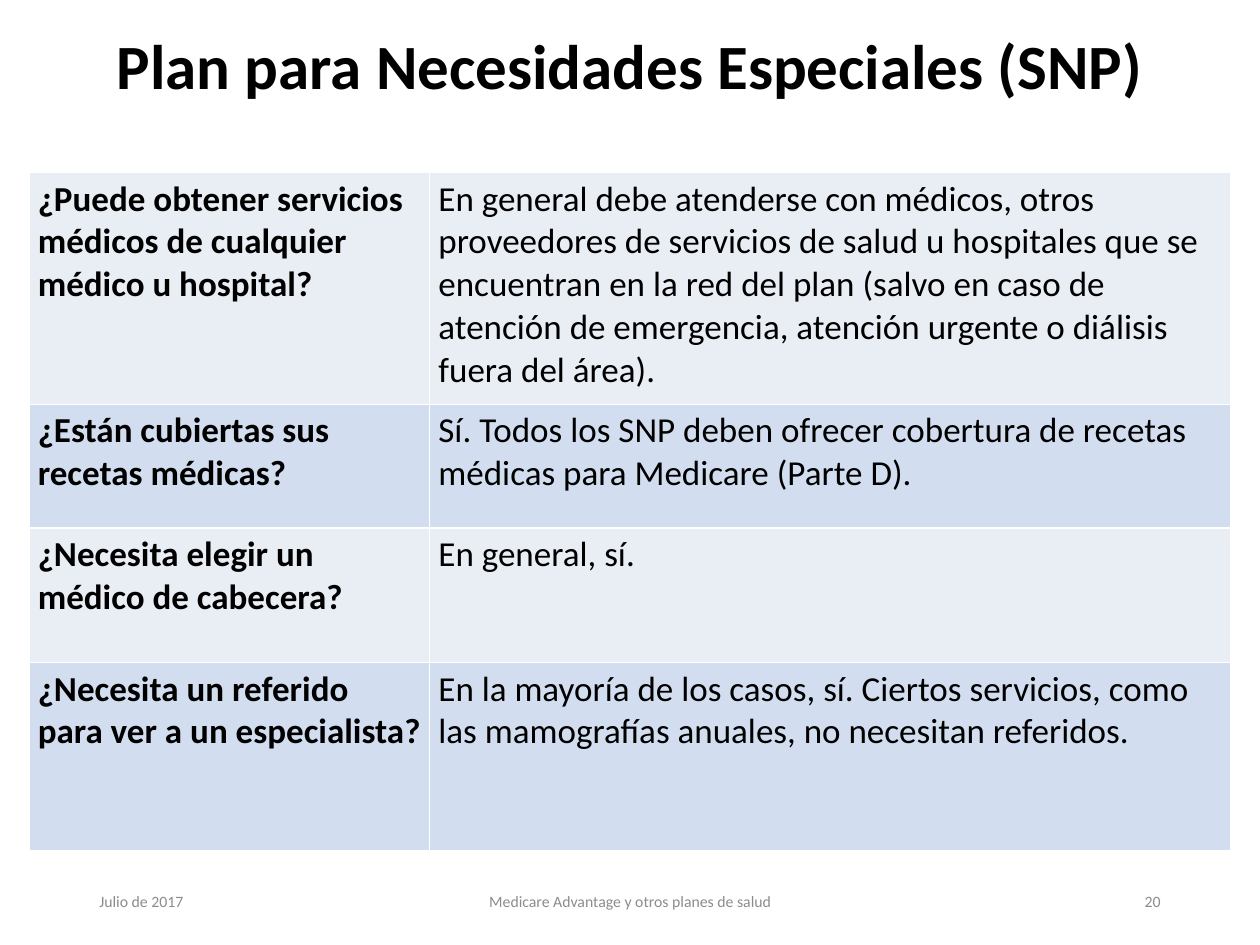
from pptx import Presentation
from pptx.dml.color import RGBColor
from pptx.enum.text import MSO_ANCHOR, PP_ALIGN
from pptx.oxml import parse_xml
from pptx.oxml.ns import nsdecls
from pptx.util import Inches, Pt

# Content
TITLE = "Plan para Necesidades Especiales (SNP)"
QUESTIONS = [
    ("¿Puede obtener servicios médicos de cualquier médico u hospital?",
     "En general debe atenderse con médicos, otros proveedores de servicios de salud "
     "u hospitales que se encuentran en la red del plan (salvo en caso de atención de "
     "emergencia, atención urgente o diálisis fuera del área)."),
    ("¿Están cubiertas sus recetas médicas?",
     "Sí. Todos los SNP deben ofrecer cobertura de recetas médicas para Medicare (Parte D)."),
    ("¿Necesita elegir un médico de cabecera?", "En general, sí."),
    ("¿Necesita un referido para ver a un especialista?",
     "En la mayoría de los casos, sí. Ciertos servicios, como las mamografías anuales, "
     "no necesitan referidos."),
]
FOOTER = [  # text, width, alignment
    ("Julio de 2017", 2.25, PP_ALIGN.LEFT),
    ("Medicare Advantage y otros planes de salud", 3.38, PP_ALIGN.CENTER),
    ("20", 2.25, PP_ALIGN.RIGHT),
]

# Layout and format
SLIDE_W, SLIDE_H = 10, 7.5
TABLE_LEFT, TABLE_TOP = 0.23, 1.37
ROW_HEIGHTS = [1.84, 0.98, 1.07, 1.49]
COLUMN_SHARES = [1 / 3, 2 / 3]
BAND_FILLS = ["E9EDF4", "D2DEEF"]
FOOTER_LEFT, FOOTER_TOP, FOOTER_H = 0.69, 6.95, 0.4
CELL_MARGINS = {"margin_left": 0.07, "margin_right": 0.07,
                "margin_top": 0.04, "margin_bottom": 0.04}


def color(hex_value):
    return RGBColor.from_string(hex_value)


def write(frame, text, size, hex_value="000000", bold=False, align=PP_ALIGN.LEFT):
    frame.word_wrap = True
    paragraph = frame.paragraphs[0]
    paragraph.alignment = align
    run = paragraph.add_run()
    run.text = text
    run.font.color.rgb = color(hex_value)
    for key, value in {"name": "Calibri", "size": Pt(size), "bold": bold}.items():
        setattr(run.font, key, value)
    return paragraph


def add_borders(cell, hex_value="FFFFFF", width=1):
    properties = cell._tc.get_or_add_tcPr()
    for side in "LRTB":
        properties.append(parse_xml(
            f'<a:ln{side} {nsdecls("a")} w="{Pt(width)}"><a:solidFill>'
            f'<a:srgbClr val="{hex_value}"/></a:solidFill></a:ln{side}>'))


def add_title(slide):
    title = slide.shapes.title
    place = {"left": 0, "top": -0.01, "width": SLIDE_W, "height": 1.11}
    for key, value in place.items():
        setattr(title, key, Inches(value))
    title.text_frame.vertical_anchor = MSO_ANCHOR.MIDDLE
    paragraph = write(title.text_frame, TITLE, 36, bold=True, align=PP_ALIGN.CENTER)
    paragraph.line_spacing = 0.9


def add_questions(slide):
    width = SLIDE_W - 2 * TABLE_LEFT
    table = slide.shapes.add_table(
        len(QUESTIONS), len(COLUMN_SHARES), Inches(TABLE_LEFT), Inches(TABLE_TOP),
        Inches(width), Inches(sum(ROW_HEIGHTS))).table
    table.first_row = table.horz_banding = False
    for column, share in zip(table.columns, COLUMN_SHARES):
        column.width = Inches(width * share)
    for r, (texts, height) in enumerate(zip(QUESTIONS, ROW_HEIGHTS)):
        table.rows[r].height = Inches(height)
        for c, text in enumerate(texts):
            cell = table.cell(r, c)
            for key, value in CELL_MARGINS.items():
                setattr(cell, key, Inches(value))
            add_borders(cell)
            cell.fill.solid()
            cell.fill.fore_color.rgb = color(BAND_FILLS[r % 2])
            write(cell.text_frame, text, 20, bold=c == 0)


def add_footer(slide):
    free = SLIDE_W - 2 * FOOTER_LEFT - sum(width for _, width, _ in FOOTER)
    gap = free / (len(FOOTER) - 1)
    left = FOOTER_LEFT
    for text, width, align in FOOTER:
        frame = slide.shapes.add_textbox(Inches(left), Inches(FOOTER_TOP),
                                         Inches(width), Inches(FOOTER_H)).text_frame
        frame.vertical_anchor = MSO_ANCHOR.MIDDLE
        write(frame, text, 9, "8C8C8C", align=align)
        left += width + gap


def main():
    deck = Presentation()
    deck.slide_width, deck.slide_height = Inches(SLIDE_W), Inches(SLIDE_H)
    slide = deck.slides.add_slide(deck.slide_layouts[5])  # title only
    add_title(slide)
    add_questions(slide)
    add_footer(slide)
    deck.save("out.pptx")


if __name__ == "__main__":
    main()
